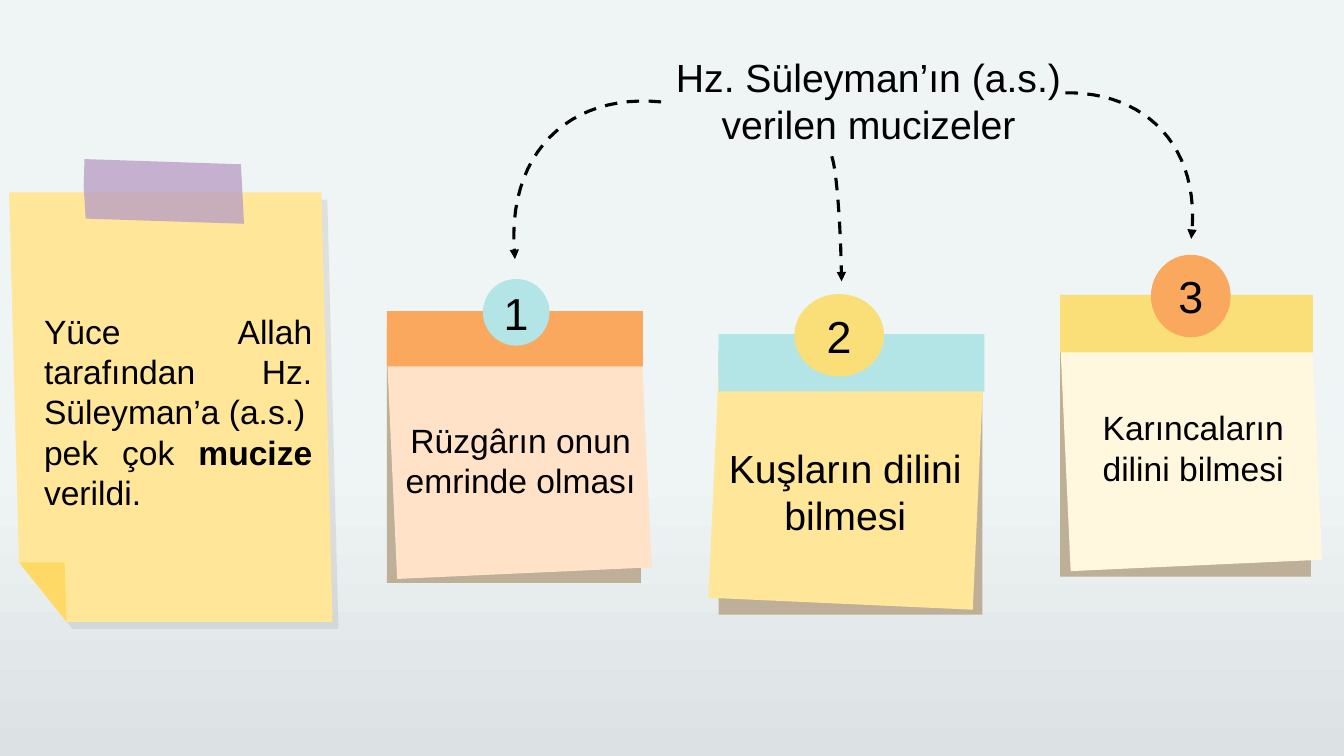
"""Build the slide about the miracles given to Hz. Süleyman."""
from dataclasses import dataclass

from lxml.etree import SubElement
from pptx import Presentation
from pptx.dml.color import RGBColor
from pptx.enum.dml import MSO_LINE
from pptx.enum.shapes import MSO_SHAPE
from pptx.enum.text import MSO_ANCHOR, MSO_AUTO_SIZE, PP_ALIGN
from pptx.oxml.ns import qn
from pptx.shapes.autoshape import Shape
from pptx.slide import Slide
from pptx.text.text import TextFrame
from pptx.util import Cm, Pt

Point = tuple[float, float]
Box = tuple[float, float, float, float]
Run = tuple[str, bool]

FONT = "Arial"
BLACK = "000000"
CURVE_STEPS = 24


@dataclass(frozen=True)
class Note:
    """A numbered sticky note; lengths are in centimetres."""

    number: str
    caption: str
    caption_size: int
    caption_box: Box
    back: Box
    tilt: float
    badge_centre: float
    badge_size: Point
    sheet_color: str
    band_color: str
    badge_color: str


@dataclass(frozen=True)
class Patch:
    """A filled polygon of the pinned paper."""

    points: list[Point]
    color: str
    opacity: int = 100


NOTES = [
    Note("2", "Kuşların dilini bilmesi", 28, (18.01, 11.2, 6.58, 2.39),
         (18.11, 8.84, 6.65, 6.65), 2.6, 21.15, (2.26, 2.08),
         "FFE699", "B3E5E6", "FADE78"),
    Note("1", "Rüzgârın onun emrinde olması", 24, (10.11, 10.57, 6.02, 2.06),
         (9.75, 8.26, 6.4, 6.43), -2.6, 13.01, (1.68, 1.68),
         "FFE2C8", "F9A85D", "B3E5E6"),
    Note("3", "Karıncaların dilini bilmesi", 24, (27.2, 10.26, 5.74, 2.06),
         (26.72, 7.85, 6.32, 6.68), -2.6, 30.01, (2.01, 2.08),
         "FFF8DE", "FADE78", "F9A85D"),
]

PAPER = [(0.23, 4.85), (0.48, 14.17), (1.68, 15.67), (8.38, 15.67), (8.1, 4.85)]
FOLD = [(0.48, 14.17), (1.68, 15.67), (1.63, 14.17)]
TAPE = [(2.13, 4.01), (2.11, 4.7), (2.16, 5.51), (6.15, 5.64), (6.1, 4.65), (6.07, 4.14)]
PATCHES = [
    Patch([(x + 0.15, y + 0.18) for x, y in PAPER], "918C7F", 19),
    Patch(PAPER, "FFE699"),
    Patch(FOLD, "FFD966"),
    Patch(TAPE, "BA9EC5", 79),
]

ARROWS = [
    [(16.66, 2.57), (14.38, 2.34), (12.7, 3.84), (12.98, 6.53)],
    [(20.96, 3.94), (21.06, 4.19), (21.18, 5.33), (21.21, 7.09)],
    [(26.85, 2.34), (28.85, 2.31), (30.3, 3.68), (30.02, 6.02)],
]


def color(value: str) -> RGBColor:
    """Turn a hex string into a colour."""
    return RGBColor.from_string(value)


def lengths(values: tuple[float, ...]) -> list[Cm]:
    """Turn centimetre values into lengths."""
    return [Cm(value) for value in values]


def paint(shape: Shape, fill: str, opacity: int = 100) -> None:
    """Give a shape a plain fill without line or shadow."""
    shape.shadow.inherit = False
    shape.line.fill.background()
    shape.fill.solid()
    shape.fill.fore_color.rgb = color(fill)
    if opacity < 100:
        solid_color = shape.element.spPr.find(f"{qn('a:solidFill')}/{qn('a:srgbClr')}")
        SubElement(solid_color, qn("a:alpha"), val=str(opacity * 1000))


def write(frame: TextFrame, lines: list[list[Run]], size: int,
          alignment: PP_ALIGN = PP_ALIGN.CENTER, inset: float = 0,
          anchor: MSO_ANCHOR = MSO_ANCHOR.TOP) -> None:
    """Fill a text frame run by run, one paragraph per line."""
    frame.word_wrap = True
    frame.auto_size = MSO_AUTO_SIZE.NONE
    frame.vertical_anchor = anchor
    frame.margin_left = frame.margin_right = Cm(inset)
    frame.margin_top = frame.margin_bottom = Cm(inset)
    for index, line in enumerate(lines):
        paragraph = frame.add_paragraph() if index else frame.paragraphs[0]
        paragraph.alignment = alignment
        paragraph.line_spacing = 1.0
        paragraph.space_before = Pt(0)
        for text, bold in line:
            run = paragraph.add_run()
            run.text = text
            run.font.name = FONT
            run.font.size = Pt(size)
            run.font.bold = bold
            run.font.color.rgb = color(BLACK)


def add_filled(slide: Slide, kind: MSO_SHAPE, box: Box, fill: str) -> Shape:
    """Add a painted preset shape."""
    shape = slide.shapes.add_shape(kind, *lengths(box))
    paint(shape, fill)
    return shape


def add_outline(slide: Slide, points: list[Point], close: bool) -> Shape:
    """Add a freeform through the given points."""
    start, *rest = [lengths(point) for point in points]
    builder = slide.shapes.build_freeform(*start)
    builder.add_line_segments(rest, close=close)
    return builder.convert_to_shape()


def curve_points(controls: list[Point]) -> list[Point]:
    """Sample a cubic curve at equal parameter steps."""
    def blend(values: tuple[float, ...], t: float) -> float:
        a, b, c, d = values
        s = 1 - t
        return a * s**3 + 3 * b * s * s * t + 3 * c * s * t * t + d * t**3

    horizontal, vertical = zip(*controls)
    steps = [step / CURVE_STEPS for step in range(CURVE_STEPS + 1)]
    return [(blend(horizontal, t), blend(vertical, t)) for t in steps]


def add_arrow(slide: Slide, controls: list[Point]) -> None:
    """Add a dashed curved arrow."""
    arrow = add_outline(slide, curve_points(controls), close=False)
    arrow.shadow.inherit = False
    arrow.fill.background()
    arrow.line.color.rgb = color(BLACK)
    arrow.line.width = Pt(2.25)
    arrow.line.dash_style = MSO_LINE.DASH
    SubElement(arrow.element.spPr.find(qn("a:ln")), qn("a:tailEnd"), type="triangle")


def add_note(slide: Slide, note: Note) -> None:
    """Add a sticky note with its band, numbered badge and caption."""
    left, top, width, height = note.back
    sheet_left = left + (0.13 if note.tilt < 0 else -0.13)
    band_top = top - 0.42
    badge_width, badge_height = note.badge_size
    add_filled(slide, MSO_SHAPE.RECTANGLE, note.back, "BEAF99")
    sheet = add_filled(slide, MSO_SHAPE.RECTANGLE,
                       (sheet_left, top + 0.69, width + 0.02, height * 0.855), note.sheet_color)
    sheet.rotation = note.tilt
    add_filled(slide, MSO_SHAPE.RECTANGLE,
               (left, band_top, width + 0.05, height * 0.217), note.band_color)
    badge = add_filled(slide, MSO_SHAPE.OVAL,
                       (note.badge_centre - badge_width / 2, band_top - badge_height / 2 + 0.03,
                        badge_width, badge_height), note.badge_color)
    write(badge.text_frame, [[(note.number, False)]], 32, inset=0.25, anchor=MSO_ANCHOR.MIDDLE)
    caption = slide.shapes.add_textbox(*lengths(note.caption_box))
    write(caption.text_frame, [[(note.caption, False)]], note.caption_size)


def set_background(slide: Slide) -> None:
    """Shade the slide background towards the bottom."""
    fill = slide.background.fill
    fill.gradient()
    fill.gradient_angle = 270
    for stop, (position, value) in zip(fill.gradient_stops, [(0.62, "EFF4F5"), (1, "DCE1E4")]):
        stop.position = position
        stop.color.rgb = color(value)


def main() -> None:
    """Build and save the presentation."""
    presentation = Presentation()
    presentation.slide_width, presentation.slide_height = Cm(33.87), Cm(19.05)
    slide = presentation.slides.add_slide(presentation.slide_layouts[5])
    set_background(slide)
    title = slide.shapes.title
    title.left, title.top, title.width, title.height = lengths((14.33, 1.35, 15.11, 2.39))
    write(title.text_frame, [[("Hz. Süleyman’ın (a.s.)", False)], [("verilen mucizeler", False)]], 28)
    for patch in PATCHES:
        paint(add_outline(slide, patch.points, close=True), patch.color, patch.opacity)
    message = slide.shapes.add_textbox(*lengths((1.11, 7.83, 6.76, 5.13)))
    write(message.text_frame,
          [[("Yüce Allah tarafından Hz. Süleyman’a (a.s.)", False)],
           [("pek çok ", False), ("mucize", True), (" verildi.", False)]],
          24, PP_ALIGN.JUSTIFY)
    for note in NOTES:
        add_note(slide, note)
    for controls in ARROWS:
        add_arrow(slide, controls)
    presentation.save("out.pptx")


if __name__ == "__main__":
    main()
